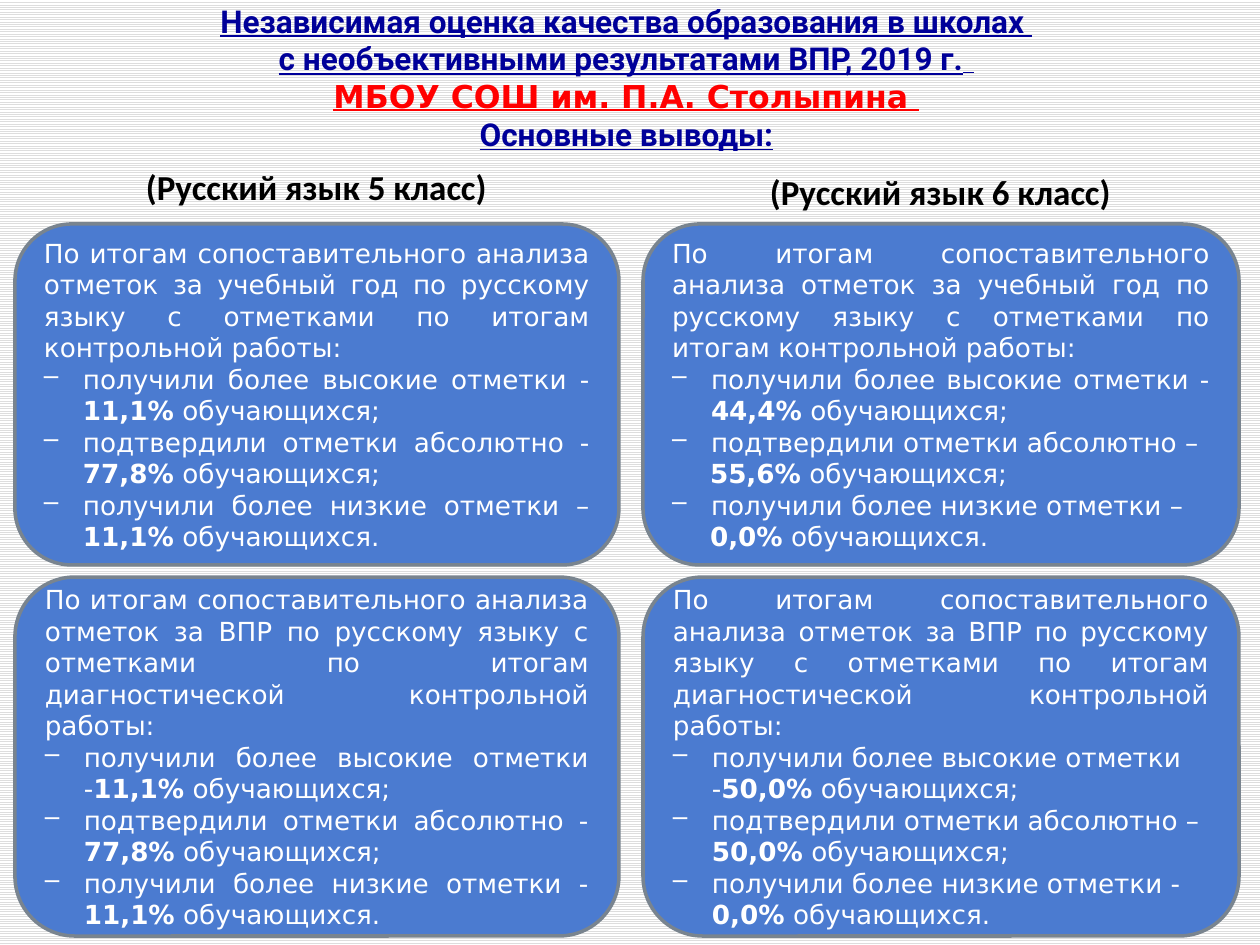
from lxml import etree
from pptx import Presentation
from pptx.dml.color import RGBColor
from pptx.enum.dml import MSO_PATTERN
from pptx.enum.shapes import MSO_SHAPE
from pptx.enum.text import MSO_ANCHOR, PP_ALIGN
from pptx.oxml.ns import qn
from pptx.util import Emu, Pt

ROUNDED = MSO_SHAPE.ROUNDED_RECTANGLE
LIGHT_HORIZONTAL = MSO_PATTERN.LIGHT_HORIZONTAL
MIDDLE, BOTTOM = MSO_ANCHOR.MIDDLE, MSO_ANCHOR.BOTTOM
LEFT, CENTER, JUSTIFY = PP_ALIGN.LEFT, PP_ALIGN.CENTER, PP_ALIGN.JUSTIFY

NAVY = RGBColor(0x00, 0x00, 0x99)
RED = RGBColor(0xFF, 0x00, 0x00)
BLACK = RGBColor(0x00, 0x00, 0x00)
WHITE = RGBColor(0xFF, 0xFF, 0xFF)
STRIPE = RGBColor(0xDD, 0xDD, 0xDD)
PANEL_BLUE = RGBColor(0x4B, 0x7B, 0xD0)
PANEL_BORDER = RGBColor(0x79, 0x84, 0x8F)

PX_PER_INCH = 126
HANGING = 39
CONTINUATION = 38

YEAR_INTRO = ("По итогам сопоставительного анализа отметок за учебный год по русскому "
              "языку с отметками по итогам контрольной работы:")
VPR_INTRO = ("По итогам сопоставительного анализа отметок за ВПР по русскому языку "
             "с отметками по итогам диагностической контрольной работы:")
RESULTS = (("получили более высокие отметки", ";"),
           ("подтвердили отметки абсолютно", ";"),
           ("получили более низкие отметки", "."))

COLUMNS = ((15, 604), (643, 596))
ROWS = ((224, 341), (577, 359))
PANELS = (
    (0, 0, YEAR_INTRO, ((" - ", "11,1%"), (" - ", "77,8%"), (" – ", "11,1%")), JUSTIFY, ()),
    (0, 1, VPR_INTRO, ((" -", "11,1%"), (" - ", "77,8%"), (" - ", "11,1%")), JUSTIFY, ()),
    (1, 0, YEAR_INTRO, ((" - ", "44,4%"), (" – ", "55,6%"), (" – ", "0,0%")), JUSTIFY, (1, 2)),
    (1, 1, VPR_INTRO, ((" -", "50,0%"), (" – ", "50,0%"), (" - ", "0,0%")), LEFT, ()),
)
HEADINGS = (
    ((129, 146, 375, 86), "(Русский язык 5 класс)"),
    ((757, 156, 367, 76), "(Русский язык 6 класс)"),
)
TITLE_LINES = (
    (("Независимая оценка качества образования в школах ", "Roboto", NAVY),),
    (("с необъективными результатами ВПР, 2019 г.", "Roboto", NAVY), (" ", "DejaVu Sans", NAVY)),
    (("МБОУ СОШ им. П.А. Столыпина ", "DejaVu Sans", RED),),
    (("Основные выводы:", "Roboto", NAVY),),
)


def px(length):
    return Emu(round(length * 914400 / PX_PER_INCH))


def add_text(paragraph, text, font="DejaVu Sans", size=15, color=WHITE,
             bold=False, underline=False):
    run = paragraph.add_run()
    run.text = text
    run.font.name = font
    run.font.size = Pt(size)
    run.font.color.rgb = color
    run.font.bold = bold
    run.font.underline = underline


def add_text_box(slide, box, anchor):
    frame = slide.shapes.add_textbox(*map(px, box)).text_frame
    frame.word_wrap = True
    frame.vertical_anchor = anchor
    paragraph = frame.paragraphs[0]
    paragraph.alignment = CENTER
    return paragraph


def add_paragraph(frame, alignment, indent=0, bullet=False):
    paragraph = frame.add_paragraph()
    paragraph.alignment = alignment
    properties = paragraph._p.get_or_add_pPr()
    properties.set("marL", str(px(indent)))
    if bullet:
        properties.set("indent", str(-px(indent)))
        etree.SubElement(properties, qn("a:buChar")).set("char", "–")
    return paragraph


def add_title(slide, box):
    paragraph = add_text_box(slide, box, BOTTOM)
    for number, line in enumerate(TITLE_LINES):
        if number:
            paragraph.add_line_break()
        for text, font, color in line:
            add_text(paragraph, text, font=font, size=18, color=color,
                     bold=True, underline=True)


def add_heading(slide, box, text):
    paragraph = add_text_box(slide, box, MIDDLE)
    paragraph.line_spacing = 0.9
    add_text(paragraph, text, font="Calibri", size=20, color=BLACK, bold=True)


def add_panel(slide, box, intro, values, alignment, split_rows):
    shape = slide.shapes.add_shape(ROUNDED, *map(px, box))
    shape.shadow.inherit = False
    shape.fill.solid()
    shape.fill.fore_color.rgb = PANEL_BLUE
    shape.line.color.rgb = PANEL_BORDER
    shape.line.width = Pt(2)
    frame = shape.text_frame
    frame.word_wrap = True
    frame.vertical_anchor = MIDDLE
    frame.paragraphs[0].alignment = JUSTIFY
    add_text(frame.paragraphs[0], intro)
    for row, ((result, ending), (dash, value)) in enumerate(zip(RESULTS, values)):
        paragraph = add_paragraph(frame, alignment, HANGING, bullet=True)
        add_text(paragraph, result + dash)
        if row in split_rows:
            paragraph = add_paragraph(frame, alignment, CONTINUATION)
        add_text(paragraph, value, bold=True)
        add_text(paragraph, " обучающихся" + ending)


def build_slide(presentation):
    slide = presentation.slides.add_slide(presentation.slide_layouts[6])
    background = slide.background.fill
    background.patterned()
    background.pattern = LIGHT_HORIZONTAL
    background.fore_color.rgb = STRIPE
    background.back_color.rgb = WHITE
    add_title(slide, (15, 93, 1223, 66))
    for box, text in HEADINGS:
        add_heading(slide, box, text)
    for column, row, *content in PANELS:
        left, width = COLUMNS[column]
        top, height = ROWS[row]
        add_panel(slide, (left, top, width, height), *content)


def main():
    presentation = Presentation()
    presentation.slide_width = px(1260)
    presentation.slide_height = px(945)
    build_slide(presentation)
    presentation.save("out.pptx")


if __name__ == "__main__":
    main()
